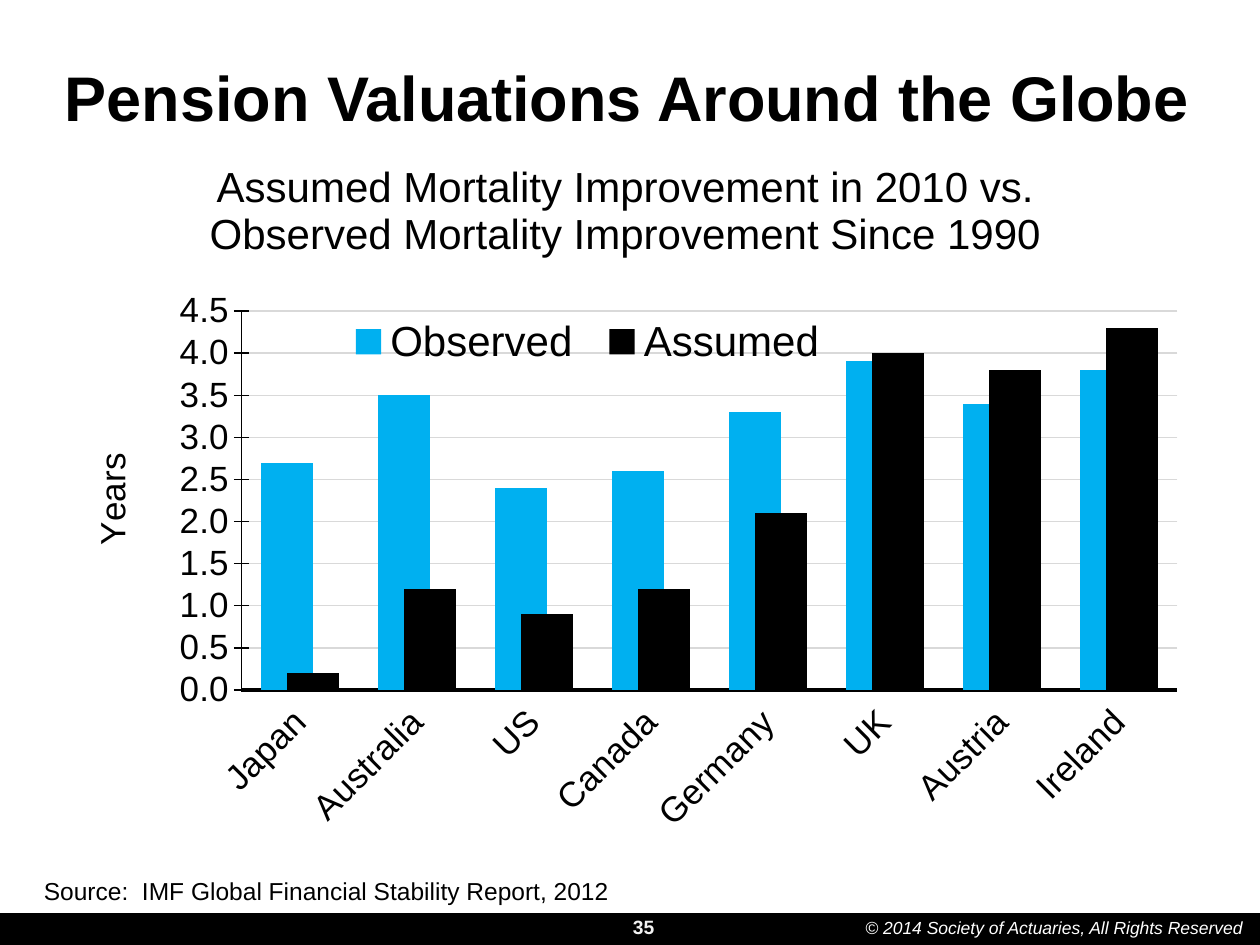
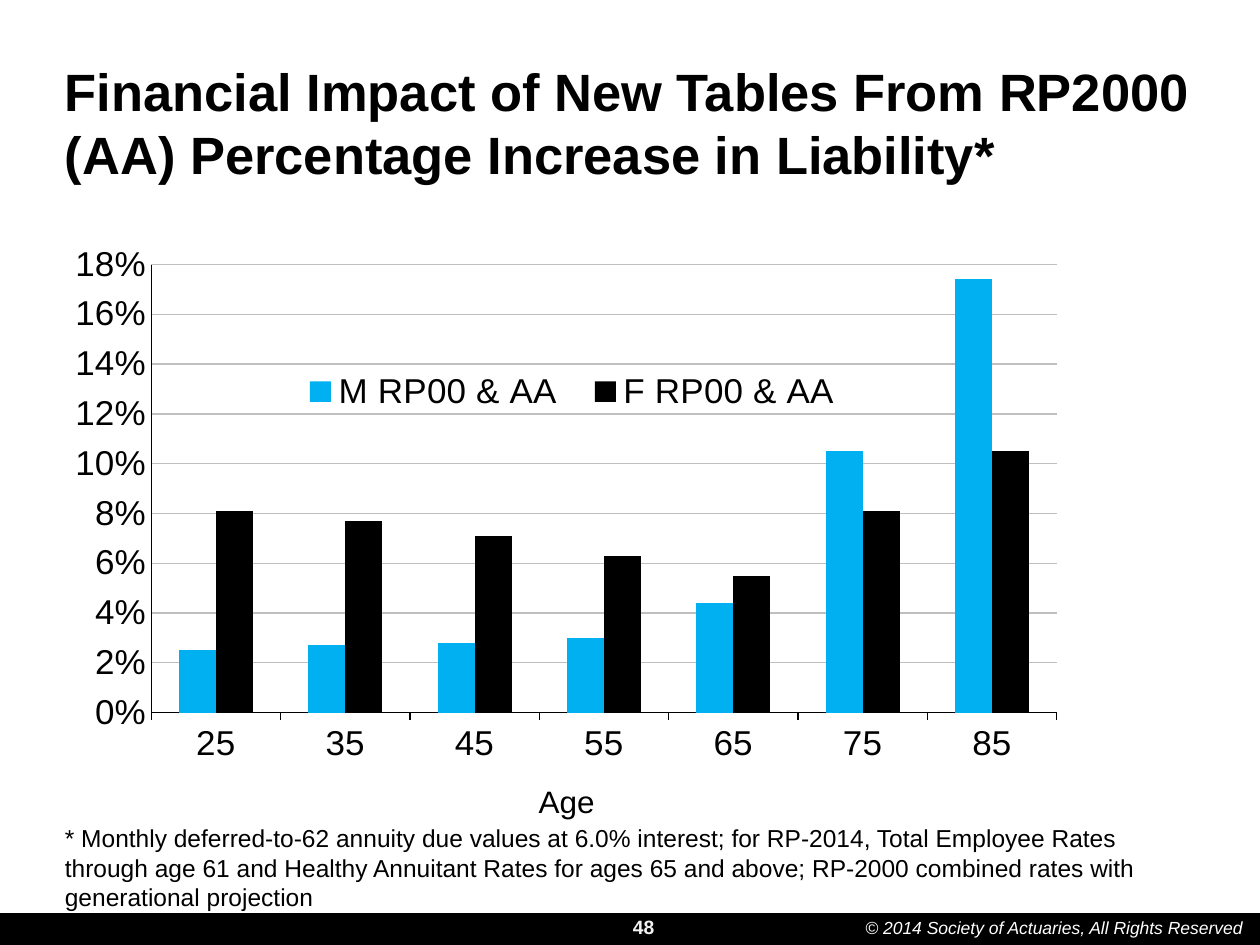
import pptx
import pptx.chart.data
import pptx.dml.color
import pptx.enum.chart
import pptx.enum.shapes
import pptx.enum.text
import pptx.oxml
import pptx.oxml.ns
import pptx.util

Pt = pptx.util.Pt
TICK = pptx.enum.chart.XL_TICK_MARK
ALIGN = pptx.enum.text.PP_ALIGN
ANCHOR = pptx.enum.text.MSO_ANCHOR

COLORS = {
    "black": "000000",
    "white": "FFFFFF",
    "page_number": "F2F2F2",
    "blue": "00B0F0",
    "light_grid": "D9D9D9",
    "dark_grid": "BFBFBF",
}
FONT = "Arial"
SLIDE_WIDTH, SLIDE_HEIGHT = 720, 540
BAND_HEIGHT = 18


def rgb(name):
    return pptx.dml.color.RGBColor.from_string(COLORS[name])


def style_font(font, size, color="black", bold=False, italic=False):
    font.name = FONT
    font.size = Pt(size)
    font.bold = bold
    font.italic = italic
    font.color.rgb = rgb(color)


def style_line(line, color, width):
    line.color.rgb = rgb(color)
    line.width = Pt(width)


def add_text(slide, text, box, size, color="black", bold=False, italic=False,
             align=ALIGN.LEFT, anchor=ANCHOR.TOP, wrap=True):
    frame = slide.shapes.add_textbox(*map(Pt, box)).text_frame
    frame.word_wrap = wrap
    frame.vertical_anchor = anchor
    paragraph = frame.paragraphs[0]
    paragraph.alignment = align
    run = paragraph.add_run()
    run.text = text
    style_font(run.font, size, color, bold, italic)


def add_footer(slide, page):
    band = slide.shapes.add_shape(
        pptx.enum.shapes.MSO_SHAPE.RECTANGLE,
        0, Pt(SLIDE_HEIGHT - BAND_HEIGHT), Pt(SLIDE_WIDTH), Pt(BAND_HEIGHT))
    band.shadow.inherit = False
    band.fill.solid()
    band.fill.fore_color.rgb = rgb("black")
    style_line(band.line, "black", 0.75)
    add_text(slide, str(page), (339, 516, 42, 24), 11, color="page_number",
             bold=True, align=ALIGN.RIGHT, anchor=ANCHOR.BOTTOM)
    add_text(slide, "© 2014 Society of Actuaries, All Rights Reserved",
             (487.5, 520.5, 232.5, 19.5), 10, color="white", italic=True, wrap=False)


def add_page(deck, title, title_size, title_width, page):
    slide = deck.slides.add_slide(deck.slide_layouts[6])
    add_footer(slide, page)
    add_text(slide, title, (30, 30, title_width, 60), title_size, bold=True)
    return slide


def place(part, x, y, width=None, height=None):
    """Give a plot area, legend or title a fixed place, in percent of the chart."""
    for old in part.findall(pptx.oxml.ns.qn("c:layout")):
        part.remove(old)
    is_plot = part.tag == pptx.oxml.ns.qn("c:plotArea")
    settings = [("layoutTarget", "inner")] if is_plot else []
    settings += [("xMode", "edge"), ("yMode", "edge"), ("x", x / 100), ("y", y / 100)]
    if width is not None:
        settings += [("w", width / 100), ("h", height / 100)]
    inner = "".join(f'<c:{name} val="{value}"/>' for name, value in settings)
    layout = pptx.oxml.parse_xml(
        f'<c:layout {pptx.oxml.ns.nsdecls("c")}>'
        f"<c:manualLayout>{inner}</c:manualLayout></c:layout>")
    part.insert(0 if is_plot else 1, layout)


def set_title(title, lines, size, x, y):
    frame = title.text_frame
    frame.text = "\n".join(lines)
    for paragraph in frame.paragraphs:
        style_font(paragraph.runs[0].font, size)
    place(title._element, x, y)
    return frame


def rotate(body, degrees):
    body.set("rot", str(degrees * 60000))
    body.set("vert", "horz")


def style_axis(axis, tick, width):
    axis.major_tick_mark = tick
    axis.minor_tick_mark = TICK.NONE
    style_font(axis.tick_labels.font, 20)
    style_line(axis.format.line, "black", width)


def style_value_axis(axis, tick, top, step, number_format, grid):
    style_axis(axis, tick, 0.75)
    axis.minimum_scale, axis.maximum_scale, axis.major_unit = 0, top, step
    axis.tick_labels.number_format = number_format
    axis.tick_labels.number_format_is_linked = False
    axis.has_major_gridlines = True
    style_line(axis.major_gridlines.format.line, grid, 0.75)


def add_column_chart(slide, box, categories, series, gap, overlap, plot_place):
    data = pptx.chart.data.CategoryChartData()
    data.categories = categories
    for name, values in series.items():
        data.add_series(name, values)
    chart = slide.shapes.add_chart(
        pptx.enum.chart.XL_CHART_TYPE.COLUMN_CLUSTERED, *map(Pt, box), data).chart
    style_font(chart.font, 10)
    chart.has_title = False
    columns = chart.plots[0]
    columns.vary_by_categories = False
    columns.gap_width, columns.overlap = gap, overlap
    for group, color in zip(columns.series, ("blue", "black")):
        group.format.fill.solid()
        group.format.fill.fore_color.rgb = rgb(color)
        group.invert_if_negative = False
    place(chart._chartSpace.chart.plotArea, *plot_place)
    return chart


def add_legend(chart, position, size, legend_place):
    chart.has_legend = True
    chart.legend.position = position
    chart.legend.include_in_layout = False
    style_font(chart.legend.font, size)
    place(chart.legend._element, *legend_place)


def build_mortality_page(deck):
    slide = add_page(deck, "Pension Valuations Around the Globe", 36, 690, 35)
    countries = ["Japan", "Australia", "US", "Canada", "Germany", "UK", "Austria", "Ireland"]
    improvement = {
        "Observed": (2.7, 3.5, 2.4, 2.6, 3.3, 3.9, 3.4, 3.8),
        "Assumed": (0.2, 1.2, 0.9, 1.2, 2.1, 4.0, 3.8, 4.3),
    }
    chart = add_column_chart(slide, (30, 78, 654, 419), countries, improvement,
                             75, 50, (16.5, 23.8, 81.8, 51.7))
    set_title(chart.chart_title, ["Assumed Mortality Improvement in 2010 vs.",
                                  "Observed Mortality Improvement Since 1990"], 24, 13.4, 2.9)
    chart.chart_title.include_in_layout = False
    add_legend(chart, pptx.enum.chart.XL_LEGEND_POSITION.RIGHT, 24, (24.5, 24.5, 44.5, 7))

    style_axis(chart.category_axis, TICK.NONE, 2)
    chart.category_axis.tick_label_position = pptx.enum.chart.XL_TICK_LABEL_POSITION.LOW
    rotate(chart.category_axis._element.txPr.bodyPr, -45)
    style_value_axis(chart.value_axis, TICK.CROSS, 4.5, 0.5, "#,##0.0", "light_grid")
    years = set_title(chart.value_axis.axis_title, ["Years"], 20, 2.7, 42.3)
    rotate(years._txBody.bodyPr, -90)

    add_text(slide, "Source:  IMF Global Financial Stability Report, 2012",
             (18, 497, 474, 24), 14)


def build_liability_page(deck):
    slide = add_page(deck, "Financial Impact of New Tables From RP2000 (AA) "
                     "Percentage Increase in Liability*", 30, 666, 48)
    ages = [str(age) for age in range(25, 86, 10)]
    increase = {
        "M RP00 & AA": (0.025, 0.027, 0.028, 0.03, 0.044, 0.105, 0.174),
        "F RP00 & AA": (0.081, 0.077, 0.071, 0.063, 0.055, 0.081, 0.105),
    }
    chart = add_column_chart(slide, (30, 114, 588, 360), ages, increase,
                             150, 0, (9.6, 10.5, 88, 72.3))
    add_legend(chart, pptx.enum.chart.XL_LEGEND_POSITION.TOP, 20, (22.5, 27.5, 56, 7))

    style_axis(chart.category_axis, TICK.OUTSIDE, 0.75)
    set_title(chart.category_axis.axis_title, ["Age"], 18, 46.7, 93)
    style_value_axis(chart.value_axis, TICK.NONE, 0.18, 0.02, "0%", "dark_grid")

    add_text(slide, "* Monthly deferred-to-62 annuity due values at 6.0% interest; "
             "for RP-2014, Total Employee Rates through age 61 and Healthy Annuitant "
             "Rates for ages 65 and above; RP-2000 combined rates with "
             "generational projection", (30, 467, 648, 41), 14)


def main():
    deck = pptx.Presentation()
    deck.slide_width, deck.slide_height = Pt(SLIDE_WIDTH), Pt(SLIDE_HEIGHT)
    build_mortality_page(deck)
    build_liability_page(deck)
    deck.save("out.pptx")


if __name__ == "__main__":
    main()
